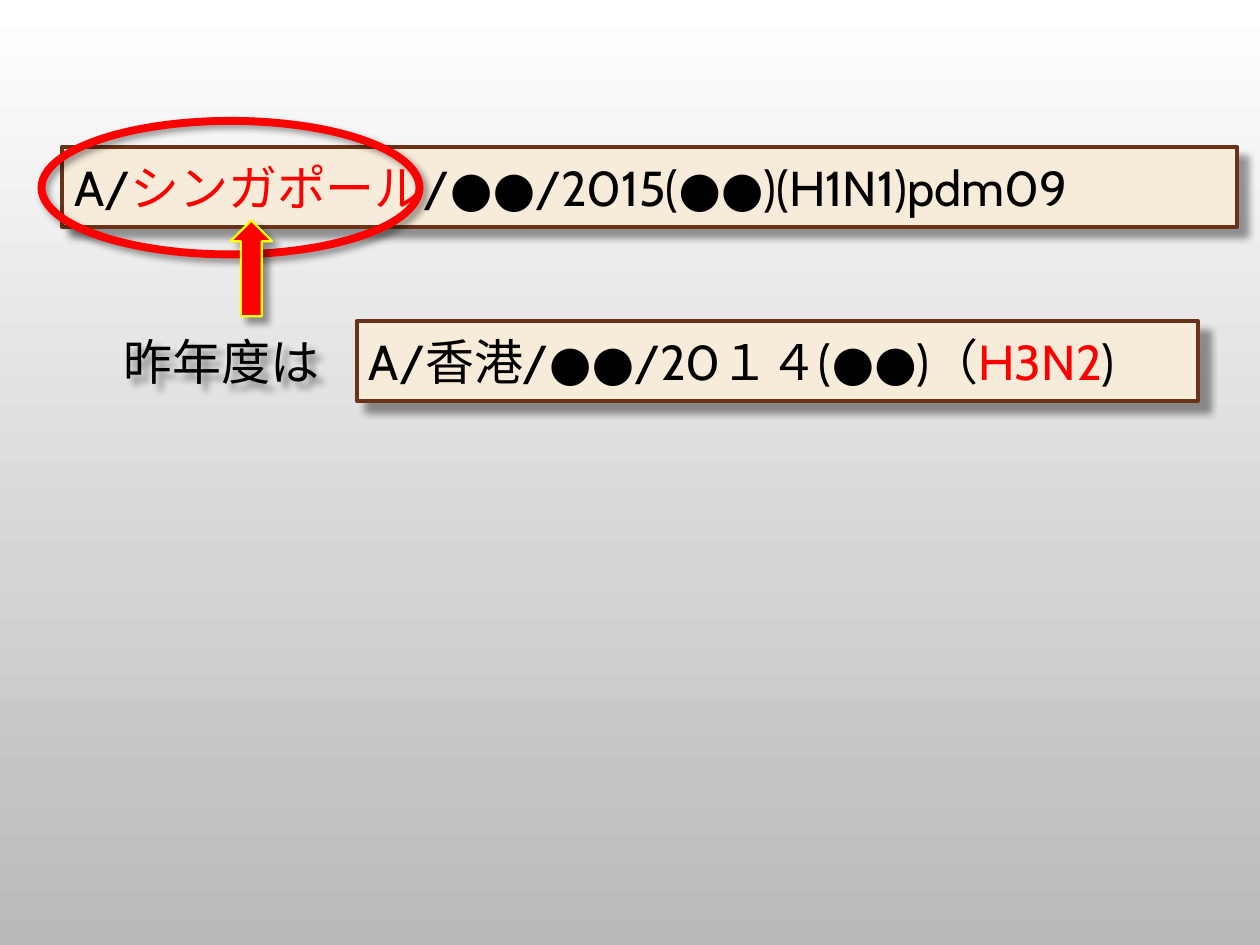
from lxml import etree
from pptx import Presentation
from pptx.dml.color import RGBColor
from pptx.enum import shapes, text
from pptx.oxml import ns
from pptx.util import Inches, Pt

BLACK, RED, YELLOW = "000000", "FF0000", "FFFF00"
CREAM, BROWN = "F7EBD9", "683319"


def rgb(value):
    return RGBColor.from_string(value)


def add_shadow(sp, distance):
    sp.shadow.inherit = False
    effects = sp._element.spPr.find(ns.qn("a:effectLst"))
    shadow = etree.SubElement(
        effects, ns.qn("a:outerShdw"), blurRad=str(Pt(4)),
        dist=str(Pt(distance)), dir="2700000", algn="tl", rotWithShape="0")
    color = etree.SubElement(shadow, ns.qn("a:srgbClr"), val=BLACK)
    etree.SubElement(color, ns.qn("a:alpha"), val="40000")


def add_text(sp, runs, align, wrap):
    tf = sp.text_frame
    tf.word_wrap = wrap
    tf.vertical_anchor = text.MSO_ANCHOR.MIDDLE
    p = tf.paragraphs[0]
    p.alignment = align
    for content, color in runs:
        r = p.add_run()
        r.text = content
        r.font.size = Pt(28)
        r.font.name = "Cabin"
        r.font.color.rgb = rgb(color)


def add_figure(slide, kind, box, fill, line, width, distance):
    sp = slide.shapes.add_shape(kind, *map(Inches, box))
    if fill:
        sp.fill.solid()
        sp.fill.fore_color.rgb = rgb(fill)
    else:
        sp.fill.background()
    sp.line.color.rgb = rgb(line)
    sp.line.width = Pt(width)
    add_shadow(sp, distance)
    return sp


def add_strain(slide, box, runs, distance, wrap):
    sp = add_figure(slide, shapes.MSO_SHAPE.RECTANGLE, box, CREAM, BROWN, 2.25, distance)
    add_text(sp, runs, text.PP_ALIGN.LEFT, wrap)


def add_last_year(slide, left, top):
    add_strain(slide, (left + 2.34, top + 0.03, 6.68, 0.63),
               [("A/香港/●●/20１４(●●)（", BLACK), ("H3N2", RED), (")", BLACK)], 8, False)
    label = slide.shapes.add_textbox(*map(Inches, (left, top, 2.54, 0.69)))
    add_text(label, [("昨年度は", BLACK)], text.PP_ALIGN.CENTER, True)
    add_shadow(label, 5)


def add_this_year(slide, left, top):
    add_strain(slide, (left, top, 9.33, 0.63),
               [("A/", BLACK), ("シンガポール", RED),
                ("/●●/2015(●●)(H1N1)pdm09", BLACK)], 7, True)
    add_figure(slide, shapes.MSO_SHAPE.OVAL, (left - 0.16, top - 0.21, 3, 1.06),
               None, RED, 4.5, 3)


def set_background(slide):
    fill = slide.background.fill
    fill.gradient()
    fill.gradient_angle = 270
    for stop, position, color in zip(fill.gradient_stops, (0, 1), ("FFFFFF", "B9B9B9")):
        stop.position = position
        stop.color.rgb = rgb(color)


def main():
    prs = Presentation()
    prs.slide_width, prs.slide_height = Inches(10), Inches(7.5)
    slide = prs.slides.add_slide(prs.slide_layouts[6])
    set_background(slide)
    add_last_year(slide, 0.49, 2.52)
    add_this_year(slide, 0.49, 1.17)
    add_figure(slide, shapes.MSO_SHAPE.UP_ARROW, (1.83, 1.75, 0.33, 0.76),
               RED, YELLOW, 1.25, 5)
    prs.save("out.pptx")


if __name__ == "__main__":
    main()
